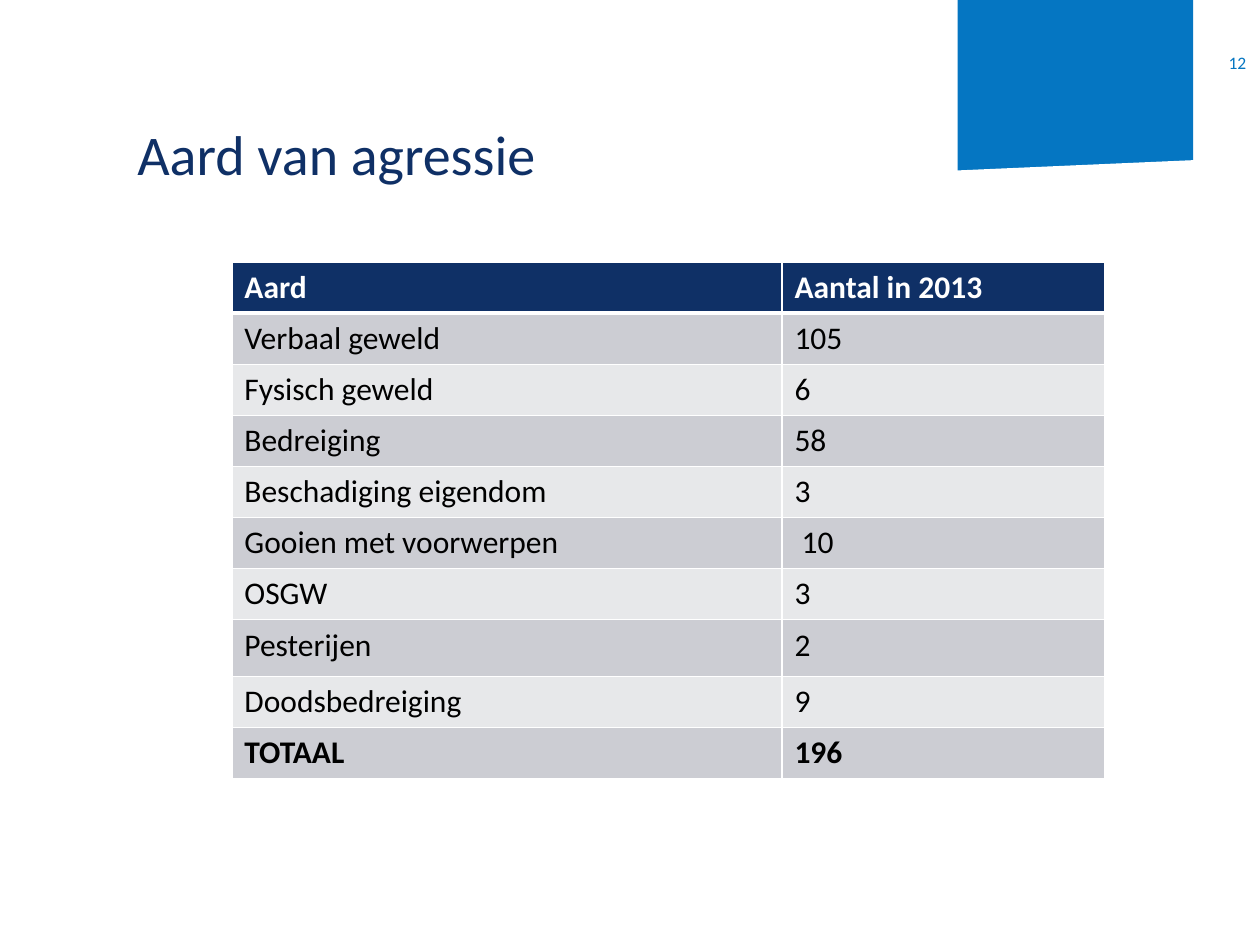
import dataclasses

import lxml.etree
import pptx
import pptx.dml.color
import pptx.enum.shapes
import pptx.enum.text
import pptx.oxml.ns
import pptx.util


@dataclasses.dataclass(frozen=True)
class Theme:
    """Colours, font and type sizes of the slide."""

    navy: str = "0F3066"
    blue: str = "0576C2"
    white: str = "FFFFFF"
    black: str = "000000"
    bands: tuple = ("CCCDD3", "E7E8EA")
    font: str = "Calibri"
    title_size: int = 32
    table_size: int = 18
    number_size: int = 10


@dataclasses.dataclass(frozen=True)
class Box:
    """A rectangle in inches."""

    left: float
    top: float
    width: float
    height: float

    def inner_box(self, left, top, width, height):
        """Return a box given as shares of this one."""
        return Box(self.left + left * self.width, self.top + top * self.height,
                   width * self.width, height * self.height)

    def lengths(self):
        """Return left, top, width and height as slide lengths."""
        return [pptx.util.Inches(value) for value in dataclasses.astuple(self)]


THEME = Theme()
SLIDE = Box(0, 0, 10, 7.5)
ROWS = [
    ("Aard", "Aantal in 2013"),
    ("Verbaal geweld", "105"),
    ("Fysisch geweld", "6"),
    ("Bedreiging", "58"),
    ("Beschadiging eigendom", "3"),
    ("Gooien met voorwerpen", " 10"),
    ("OSGW", "3"),
    ("Pesterijen", "2"),
    ("Doodsbedreiging", "9"),
    ("TOTAAL", "196"),
]
TALL_ROW = 7


def rgb(colour):
    """Turn a hexadecimal string into a colour."""
    return pptx.dml.color.RGBColor.from_string(colour)


def style_paragraph(paragraph, size, colour, bold=False):
    """Set the font of a whole paragraph."""
    font = paragraph.font
    font.name = THEME.font
    font.size = pptx.util.Pt(size)
    font.bold = bold
    font.color.rgb = rgb(colour)


def prepare_frame(frame):
    """Remove the insets and centre the text vertically."""
    frame.margin_left = frame.margin_right = 0
    frame.margin_top = frame.margin_bottom = 0
    frame.word_wrap = True
    frame.auto_size = pptx.enum.text.MSO_AUTO_SIZE.NONE
    frame.vertical_anchor = pptx.enum.text.MSO_ANCHOR.MIDDLE


def add_block(slide, box, colour, rotation=0):
    """Add a plain filled rectangle."""
    shape = slide.shapes.add_shape(
        pptx.enum.shapes.MSO_SHAPE.RECTANGLE, *box.lengths())
    shape.shadow.inherit = False
    shape.fill.solid()
    shape.fill.fore_color.rgb = rgb(colour)
    shape.line.fill.background()
    shape.rotation = rotation


def add_banner(slide, box):
    """Add the blue banner with its slanted lower edge."""
    add_block(slide, box, THEME.blue)
    add_block(slide, box.inner_box(-0.01, 0.95, 1.05, 0.23), THEME.white, 357.5)


def add_title(slide, box, text):
    """Fill and place the title placeholder."""
    title = slide.shapes.title
    title.left, title.top, title.width, title.height = box.lengths()
    title.text = text
    prepare_frame(title.text_frame)
    paragraph = title.text_frame.paragraphs[0]
    paragraph.alignment = pptx.enum.text.PP_ALIGN.LEFT
    paragraph.line_spacing = 0.9
    style_paragraph(paragraph, THEME.title_size, THEME.navy)


def add_border(cell, side, points):
    """Draw a white line on one side of a cell."""
    properties = cell._tc.get_or_add_tcPr()
    name = pptx.oxml.ns.qn
    line = lxml.etree.SubElement(
        properties, name(f"a:ln{side}"), w=str(pptx.util.Pt(points)))
    fill = lxml.etree.SubElement(line, name("a:solidFill"))
    lxml.etree.SubElement(fill, name("a:srgbClr"), val=THEME.white)


def fill_cell(cell, text, row):
    """Write and format one table cell according to its row."""
    header = row == 0
    for side in "LRTB":
        below_header = (header and side == "B") or (row == 1 and side == "T")
        add_border(cell, side, 3 if below_header else 1)
    cell.fill.solid()
    cell.fill.fore_color.rgb = rgb(
        THEME.navy if header else THEME.bands[(row - 1) % 2])
    cell.text = text
    style_paragraph(cell.text_frame.paragraphs[0], THEME.table_size,
                    THEME.white if header else THEME.black,
                    row in (0, len(ROWS) - 1))


def add_counts(slide, box):
    """Add the table of incident counts."""
    table = slide.shapes.add_table(len(ROWS), 2, *box.lengths()).table
    for column, share in zip(table.columns, (0.63, 0.37)):
        column.width = pptx.util.Inches(box.width * share)
    for index, values in enumerate(ROWS):
        share = 0.11 if index == TALL_ROW else 0.89 / (len(ROWS) - 1)
        table.rows[index].height = pptx.util.Inches(box.height * share)
        for column, text in enumerate(values):
            fill_cell(table.cell(index, column), text, index)


def add_page_number(slide, box, text):
    """Add the page number, aligned right."""
    frame = slide.shapes.add_textbox(*box.lengths()).text_frame
    prepare_frame(frame)
    frame.text = text
    paragraph = frame.paragraphs[0]
    paragraph.alignment = pptx.enum.text.PP_ALIGN.RIGHT
    style_paragraph(paragraph, THEME.number_size, THEME.blue)


def main():
    """Build and save the presentation."""
    presentation = pptx.Presentation()
    presentation.slide_width = pptx.util.Inches(SLIDE.width)
    presentation.slide_height = pptx.util.Inches(SLIDE.height)
    slide = presentation.slides.add_slide(presentation.slide_layouts[5])
    add_banner(slide, Box(7.6, 0, 1.87, 1.38))
    add_title(slide, Box(1.09, 1.02, 6.26, 0.46), "Aard van agressie")
    add_counts(slide, Box(1.84, 2.08, 6.93, 4.1))
    add_page_number(slide, Box(9.54, 0.31, 0.35, 0.37), "12")
    presentation.save("out.pptx")


if __name__ == "__main__":
    main()
